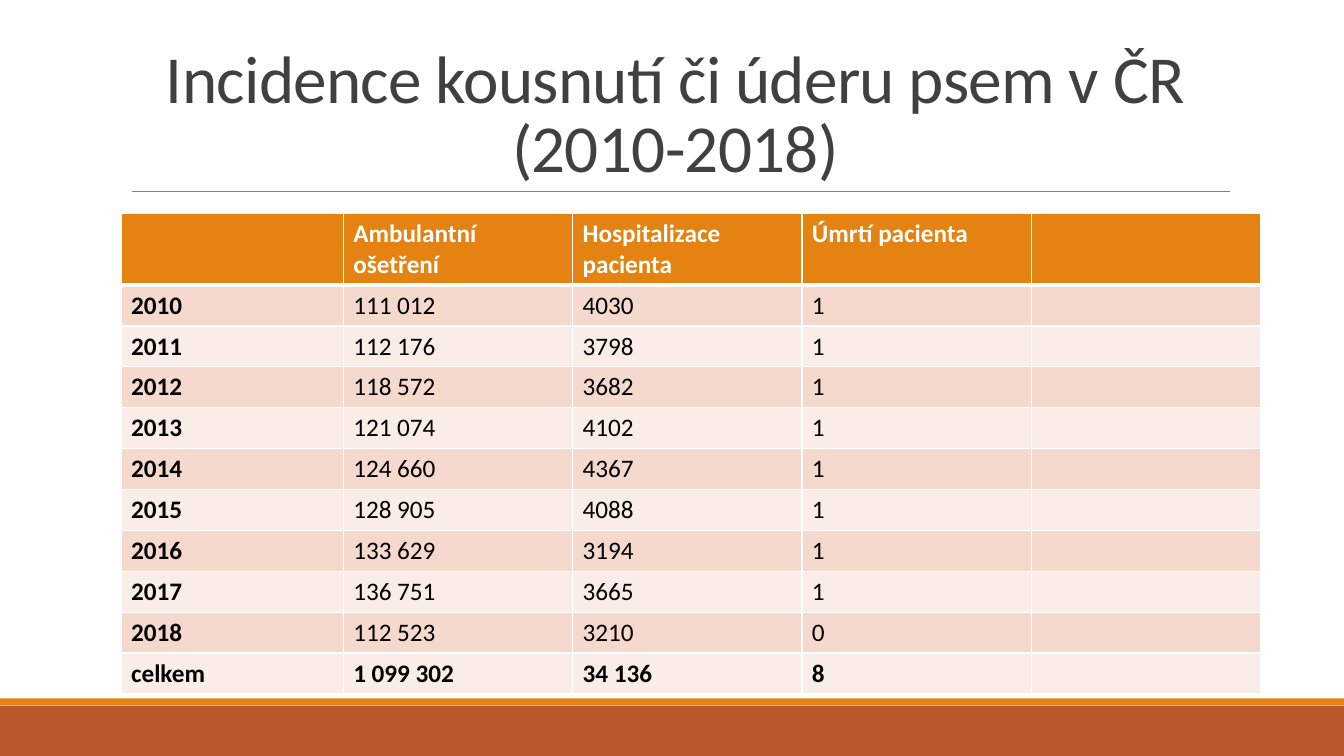
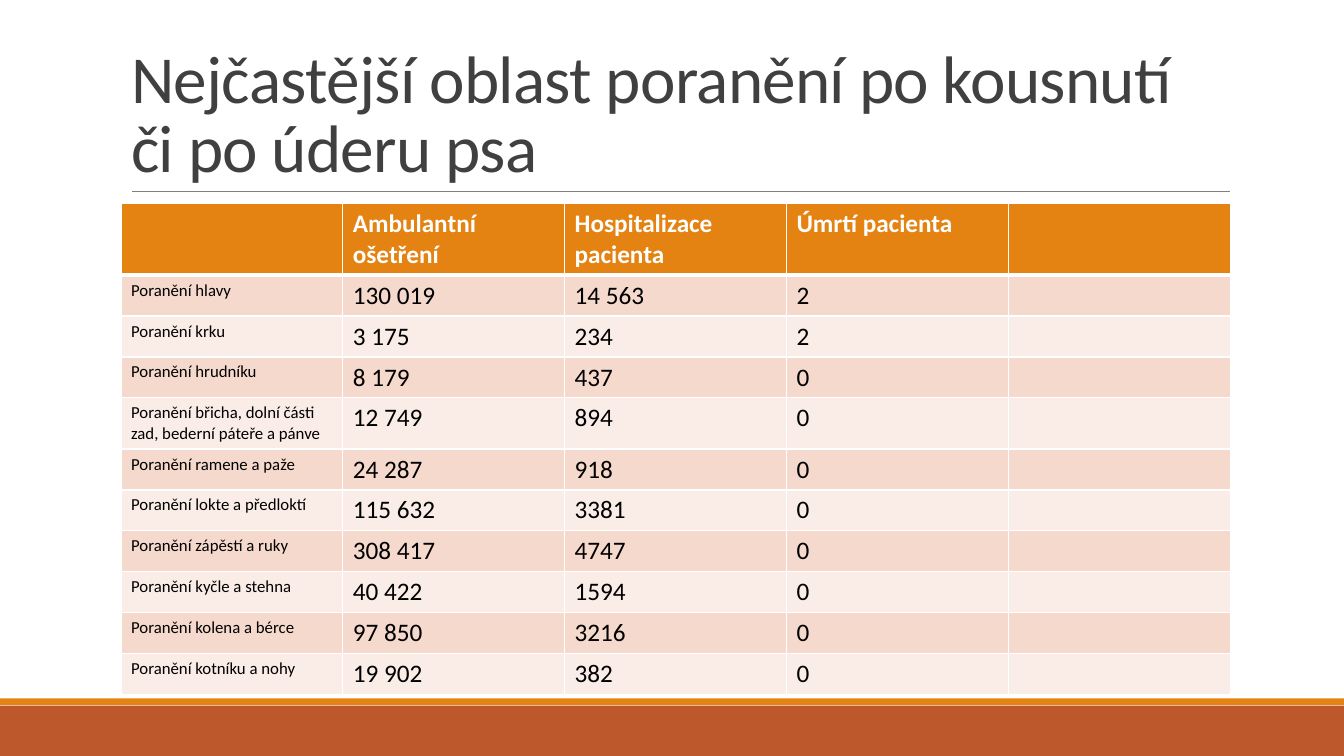
from dataclasses import dataclass

from lxml.etree import SubElement
from pptx import Presentation
from pptx.dml.color import RGBColor
from pptx.enum.shapes import MSO_CONNECTOR, MSO_SHAPE
from pptx.enum.text import MSO_ANCHOR, MSO_AUTO_SIZE, PP_ALIGN
from pptx.oxml.ns import qn
from pptx.util import Cm, Pt


@dataclass(frozen=True)
class Theme:
    """Colours, font and type sizes shared by the slides."""

    font: str = "Calibri"
    title_size: int = 48
    body_size: int = 18
    small_size: int = 12
    title: str = "404040"
    text: str = "000000"
    white: str = "FFFFFF"
    rule: str = "808080"
    accent: str = "E48312"
    band: str = "BD582C"
    stripes: tuple = ("F5D9CC", "FAEDE7")


THEME = Theme()
PAGE_WIDTH, PAGE_HEIGHT = Cm(33.87), Cm(19.05)
LEFT = Cm(3.05)
HEADER_HEIGHT, ROW_HEIGHT, TALL_ROW_HEIGHT = Cm(1.8), Cm(1.03), Cm(1.29)

HEADINGS = ("", "Ambulantní ošetření", "Hospitalizace pacienta", "Úmrtí pacienta", "")
YEARS = (
    ("2010", "111 012", "4030", "1", ""),
    ("2011", "112 176", "3798", "1", ""),
    ("2012", "118 572", "3682", "1", ""),
    ("2013", "121 074", "4102", "1", ""),
    ("2014", "124 660", "4367", "1", ""),
    ("2015", "128 905", "4088", "1", ""),
    ("2016", "133 629", "3194", "1", ""),
    ("2017", "136 751", "3665", "1", ""),
    ("2018", "112 523", "3210", "0", ""),
    ("celkem", "1 099 302", "34 136", "8", ""),
)
INJURIES = (
    ("Poranění hlavy", "130 019", "14 563", "2", ""),
    ("Poranění krku", "3 175", "234", "2", ""),
    ("Poranění hrudníku", "8 179", "437", "0", ""),
    ("Poranění břicha, dolní části zad, bederní páteře a pánve", "12 749", "894", "0", ""),
    ("Poranění ramene a paže", "24 287", "918", "0", ""),
    ("Poranění lokte a předloktí", "115 632", "3381", "0", ""),
    ("Poranění zápěstí a ruky", "308 417", "4747", "0", ""),
    ("Poranění kyčle a stehna", "40 422", "1594", "0", ""),
    ("Poranění kolena a bérce", "97 850", "3216", "0", ""),
    ("Poranění kotníku a nohy", "19 902", "382", "0", ""),
)


def write(frame, text, *, size=THEME.body_size, color=THEME.text, bold=False,
          align=PP_ALIGN.LEFT, line_spacing=None, tracking=None):
    """Write one formatted paragraph into a text frame."""
    paragraph = frame.paragraphs[0]
    paragraph.text = text
    paragraph.alignment = align
    paragraph.line_spacing = line_spacing
    for span in paragraph.runs:
        span.font.name = THEME.font
        span.font.size = Pt(size)
        span.font.bold = bold
        span.font.color.rgb = RGBColor.from_string(color)
        if tracking is not None:
            span.font._element.set("spc", str(round(tracking * 100)))


def add_band(page, top, height, color):
    """Add a full-width band."""
    band = page.shapes.add_shape(MSO_SHAPE.RECTANGLE, 0, top, PAGE_WIDTH, height)
    band.shadow.inherit = False
    band.fill.solid()
    band.fill.fore_color.rgb = RGBColor.from_string(color)
    band.line.fill.background()


def add_rule(page):
    """Add the thin line under the title."""
    rule = page.shapes.add_connector(
        MSO_CONNECTOR.STRAIGHT, Cm(3.33), Cm(4.82), Cm(31), Cm(4.82))
    rule.line.color.rgb = RGBColor.from_string(THEME.rule)
    rule.line.width = Pt(0.5)
    SubElement(rule._element.spPr, qn("a:effectLst"))


def add_page(deck, title, align):
    """Add a slide with its bands, rule and title."""
    page = deck.slides.add_slide(deck.slide_layouts[5])
    add_band(page, Cm(17.78), Cm(1.27), THEME.band)
    add_band(page, Cm(17.6), Cm(0.17), THEME.accent)
    add_rule(page)
    box = page.shapes.title
    box.left, box.top, box.width, box.height = LEFT, Cm(0.79), Cm(27.94), Cm(4.03)
    frame = box.text_frame
    frame.auto_size = MSO_AUTO_SIZE.NONE
    frame.word_wrap = True
    frame.vertical_anchor = MSO_ANCHOR.BOTTOM
    write(frame, title, size=THEME.title_size, color=THEME.title, align=align,
          line_spacing=0.85, tracking=-0.5)
    return page


def style_cell(cell, fill, *, top=1, bottom=1):
    """Give a cell white borders and a plain fill."""
    properties = cell._tc.get_or_add_tcPr()
    for side, width in (("L", 1), ("R", 1), ("T", top), ("B", bottom)):
        border = SubElement(properties, qn(f"a:ln{side}"), w=str(Pt(width)))
        solid = SubElement(border, qn("a:solidFill"))
        SubElement(solid, qn("a:srgbClr"), val=THEME.white)
    cell.fill.solid()
    cell.fill.fore_color.rgb = RGBColor.from_string(fill)


def add_data_table(page, rows, *, top, widths, label_size=THEME.body_size,
                   bold_labels=False, bold_last=False, tall_rows=()):
    """Add a striped table with the shared headings."""
    heights = [HEADER_HEIGHT] + [
        TALL_ROW_HEIGHT if number in tall_rows else ROW_HEIGHT
        for number in range(1, len(rows) + 1)]
    table = page.shapes.add_table(
        len(heights), len(widths), LEFT, top, sum(widths), sum(heights)).table
    table.horz_banding = False
    for column, width in zip(table.columns, widths):
        column.width = width
    for row, height in zip(table.rows, heights):
        row.height = height
    for column, heading in enumerate(HEADINGS):
        cell = table.cell(0, column)
        style_cell(cell, THEME.accent, bottom=3)
        write(cell.text_frame, heading, color=THEME.white, bold=True)
    for number, values in enumerate(rows, 1):
        for column, value in enumerate(values):
            cell = table.cell(number, column)
            style_cell(cell, THEME.stripes[(number - 1) % 2], top=3 if number == 1 else 1)
            is_label = column == 0
            write(cell.text_frame, value,
                  size=label_size if is_label else THEME.body_size,
                  bold=(is_label and bold_labels) or (bold_last and number == len(rows)))


def main():
    """Build and save the deck."""
    deck = Presentation()
    deck.slide_width, deck.slide_height = PAGE_WIDTH, PAGE_HEIGHT
    page = add_page(deck, "Incidence kousnutí či úderu psem v ČR\v(2010-2018)",
                    PP_ALIGN.CENTER)
    add_data_table(page, YEARS, top=Cm(5.38), widths=[Cm(5.6)] + [Cm(5.78)] * 4,
                   bold_labels=True, bold_last=True)
    page = add_page(deck, "Nejčastější oblast poranění po kousnutí či po úderu psa",
                    PP_ALIGN.LEFT)
    add_data_table(page, INJURIES, top=Cm(5.13), widths=[Cm(5.59)] * 5,
                   label_size=THEME.small_size, tall_rows=(4,))
    deck.save("out.pptx")


if __name__ == "__main__":
    main()
